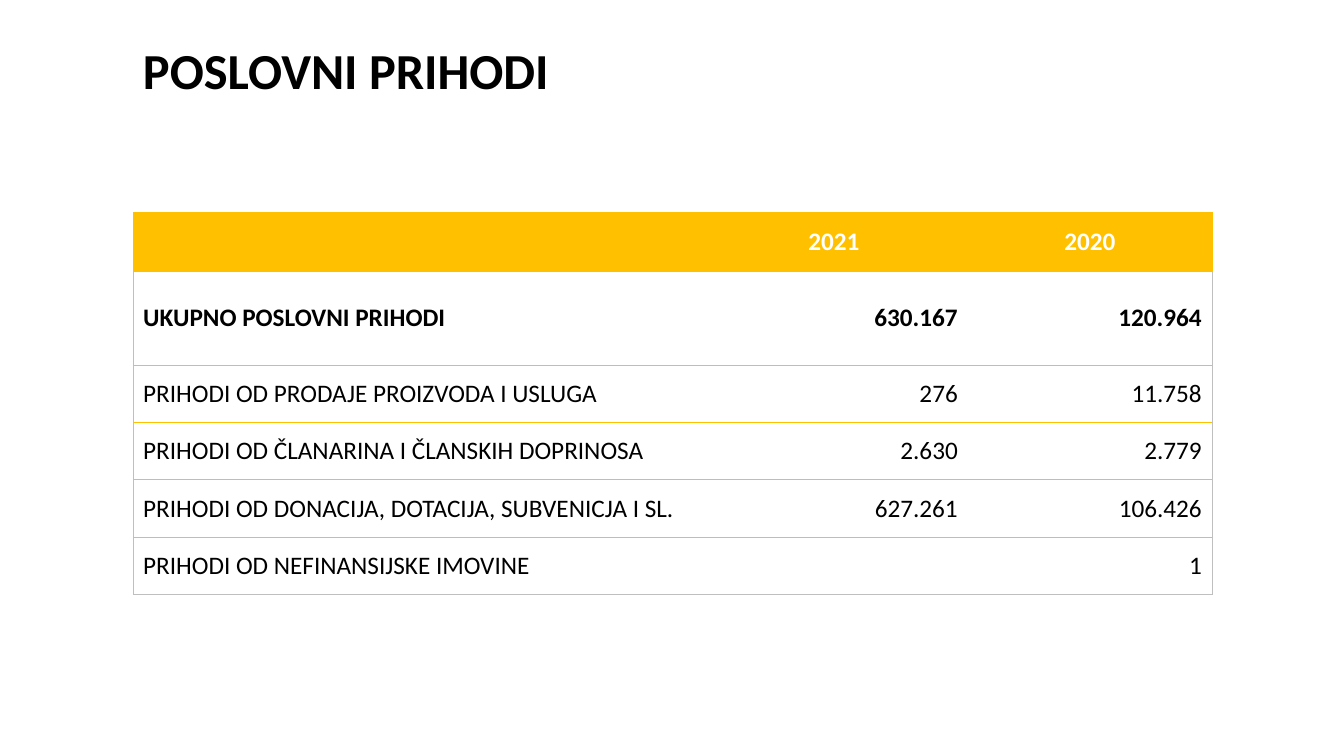
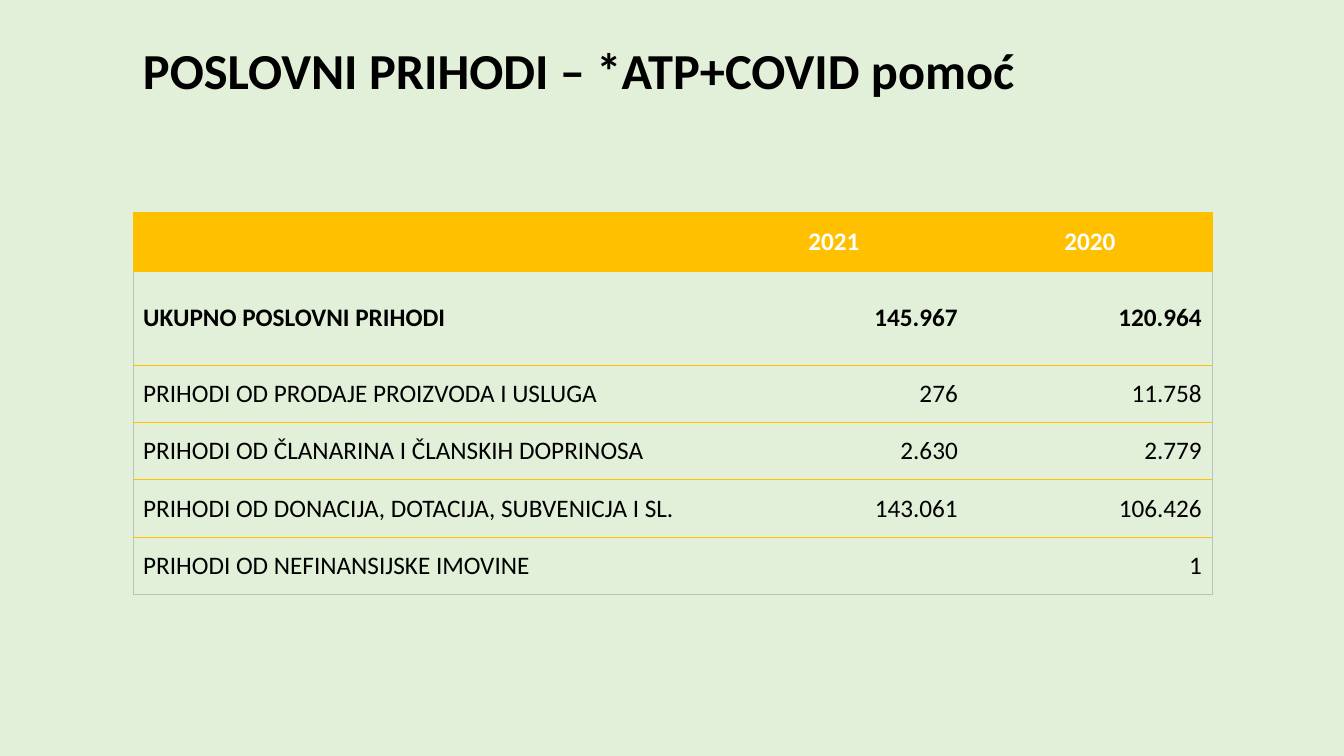
import pptx
import pptx.dml.color
import pptx.enum.text
import pptx.oxml
import pptx.oxml.ns
import pptx.util
from pptx.util import Inches

FONT = "Calibri"
BLACK, WHITE, GOLD, GREY, MINT = "000000", "FFFFFF", "FFC000", "BFBFBF", "E2F0D9"
LEFT = 1.32
COLUMN_WIDTHS = (5.62, 2.66, 2.42)
ROW_HEIGHTS = (0.58, 0.93, 0.57, 0.57, 0.57, 0.57)
ALIGN = pptx.enum.text.PP_ALIGN
MIDDLE = pptx.enum.text.MSO_ANCHOR.MIDDLE


def color(value):
    return pptx.dml.color.RGBColor.from_string(value)


def add_run(paragraph, text, size, ink, bold):
    run = paragraph.add_run()
    run.text = text
    run.font.name = FONT
    run.font.size = pptx.util.Pt(size)
    run.font.bold = bold
    run.font.color.rgb = color(ink)


def add_title(slide, text):
    title = slide.shapes.add_textbox(Inches(LEFT), 0, Inches(11.5), Inches(1.45))
    frame = title.text_frame
    frame.word_wrap = True
    frame.vertical_anchor = MIDDLE
    frame.paragraphs[0].line_spacing = 0.9
    add_run(frame.paragraphs[0], text, 36, BLACK, True)


def set_borders(cell, edges):
    properties = cell._tc.get_or_add_tcPr()
    namespace = pptx.oxml.ns.nsdecls("a")
    for position, side in enumerate("LRTB"):
        ink = edges[side]
        paint = f'<a:solidFill><a:srgbClr val="{ink}"/></a:solidFill>' if ink else "<a:noFill/>"
        line = pptx.oxml.parse_xml(f'<a:ln{side} {namespace} w="6350">{paint}</a:ln{side}>')
        properties.insert(position, line)


def cell_edges(row, column):
    outer = GREY if row else GOLD
    last_row, last_column = len(ROW_HEIGHTS) - 1, len(COLUMN_WIDTHS) - 1
    return {
        "L": outer if column == 0 else None,
        "R": outer if column == last_column else None,
        "T": GOLD,
        "B": GREY if row == last_row else GOLD,
    }


def fill_cell(cell, text, row, column):
    header = row == 0
    cell.vertical_anchor = MIDDLE
    if header:
        cell.fill.solid()
        cell.fill.fore_color.rgb = color(GOLD)
    else:
        cell.fill.background()
    set_borders(cell, cell_edges(row, column))
    if text:
        paragraph = cell.text_frame.paragraphs[0]
        number_align = ALIGN.CENTER if header else ALIGN.RIGHT
        paragraph.alignment = number_align if column else ALIGN.LEFT
        add_run(paragraph, text, 18, WHITE if header else BLACK, row < 2)


def add_income_table(slide, rows):
    frame = slide.shapes.add_table(
        len(ROW_HEIGHTS), len(COLUMN_WIDTHS), Inches(LEFT), Inches(2.11),
        Inches(sum(COLUMN_WIDTHS)), Inches(sum(ROW_HEIGHTS)))
    table = frame.table
    table.first_row = False
    table.horz_banding = False
    for column, width in zip(table.columns, COLUMN_WIDTHS):
        column.width = Inches(width)
    for table_row, height in zip(table.rows, ROW_HEIGHTS):
        table_row.height = Inches(height)
    for row, values in enumerate(rows):
        for column, text in enumerate(values):
            fill_cell(table.cell(row, column), text, row, column)


def income_rows(total, donations):
    return (
        ("", "2021", "2020"),
        ("UKUPNO POSLOVNI PRIHODI", total, "120.964"),
        ("PRIHODI OD PRODAJE PROIZVODA I USLUGA", "276", "11.758"),
        ("PRIHODI OD ČLANARINA I ČLANSKIH DOPRINOSA", "2.630", "2.779"),
        ("PRIHODI OD DONACIJA, DOTACIJA, SUBVENICJA I SL.", donations, "106.426"),
        ("PRIHODI OD NEFINANSIJSKE IMOVINE", "", "1"),
    )


def add_income_slide(deck, title, backdrop, total, donations):
    slide = deck.slides.add_slide(deck.slide_layouts[6])
    slide.background.fill.solid()
    slide.background.fill.fore_color.rgb = color(backdrop)
    add_title(slide, title)
    add_income_table(slide, income_rows(total, donations))


def main():
    deck = pptx.Presentation()
    deck.slide_width = Inches(13.33)
    deck.slide_height = Inches(7.5)
    add_income_slide(deck, "POSLOVNI PRIHODI", WHITE, "630.167", "627.261")
    add_income_slide(deck, "POSLOVNI PRIHODI – *ATP+COVID pomoć", MINT, "145.967", "143.061")
    deck.save("out.pptx")


if __name__ == "__main__":
    main()
